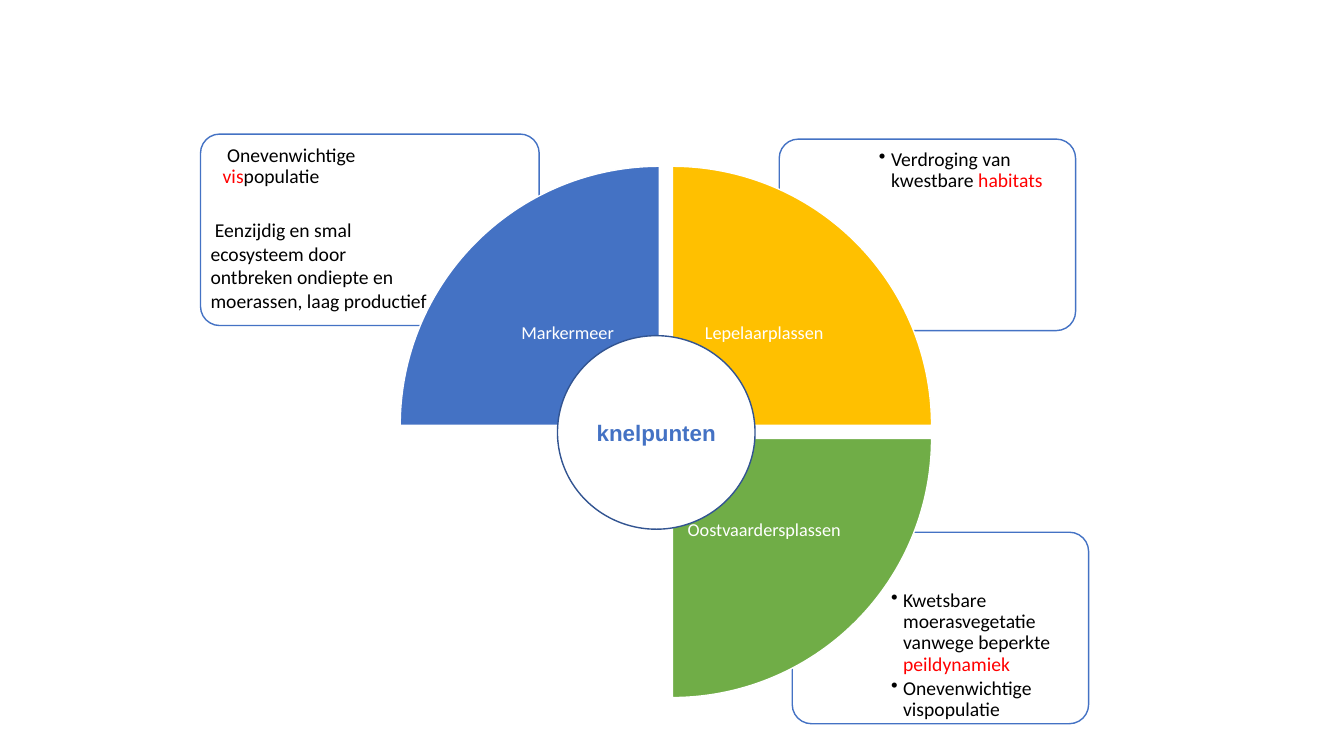
from lxml import etree
from pptx import Presentation
from pptx.dml.color import RGBColor
from pptx.enum.shapes import MSO_SHAPE
from pptx.enum.text import MSO_ANCHOR, PP_ALIGN
from pptx.oxml.ns import qn
from pptx.util import Inches, Pt

WIDE, HIGH = Inches(13.33), Inches(7.5)
BLUE = RGBColor(0x44, 0x72, 0xC4)
GOLD = RGBColor(0xFF, 0xC0, 0x00)
GREEN = RGBColor(0x70, 0xAD, 0x47)
NAVY = RGBColor(0x32, 0x54, 0x91)
RED = RGBColor(0xFF, 0x00, 0x00)
BLACK = RGBColor(0x00, 0x00, 0x00)
WHITE = RGBColor(0xFF, 0xFF, 0xFF)
ROUND, WEDGE, OVAL = MSO_SHAPE.ROUNDED_RECTANGLE, MSO_SHAPE.PIE_WEDGE, MSO_SHAPE.OVAL
TOP, MIDDLE, CENTER = MSO_ANCHOR.TOP, MSO_ANCHOR.MIDDLE, PP_ALIGN.CENTER

# Lengths are percentages of the slide's width and height.
WHEEL = (29.78, 22)
SIDE = (19.28, 34.27)
STEP = (20.25, 36)
LABEL = (13.65, 24.27)
HUB = (41.48, 44.4, 14.7, 25.6)
CARD_H, NOTE_H = 25.33, 17.87

BODY = {"size": Pt(14), "name": "Calibri"}
NAME = {"size": Pt(13), "name": "Calibri"}
TITLE = {"size": Pt(16), "name": "Arial", "bold": True}
TIGHT = {"line_spacing": 0.9, "space_after": Pt(2)}
MID = {"alignment": CENTER, "line_spacing": 0.9}
APART = {"space_before": Pt(20)}

# column, row, turn, colour, name
PARTS = [
    (0, 0, 0, BLUE, "Markermeer"),
    (1, 0, 90, GOLD, "Lepelaarplassen"),
    (1, 1, 180, GREEN, "Oostvaardersplassen"),
]

# card left, top, width; note left, top, width; paragraphs of
# (runs, format, indent in inches, bullet)
CARDS = [
    ((58.95, 70.4, 22.05), (65.85, 77.33, 14.78), [
        ([("Kwetsbare moerasvegetatie vanwege beperkte ", BLACK),
          ("peildynamiek", RED)], TIGHT, 0.12, True),
        ([("Onevenwichtige vispopulatie", BLACK)], TIGHT, 0.12, True)]),
    ((57.98, 18.4, 22.05), (64.95, 18.93, 14.78), [
        ([("Verdroging van kwestbare ", BLACK), ("habitats", RED)],
         TIGHT, 0.12, True)]),
    ((14.92, 17.73, 25.2), (15.22, 18.4, 17.03), [
        ([(" Onevenwichtige ", BLACK), ("vis", RED), ("populatie", BLACK)],
         TIGHT, 0.12, False),
        ([(" Eenzijdig en smal ecosysteem door ontbreken ondiepte en "
           "moerassen, laag productief", BLACK)], APART, 0, False)]),
]


def place(x, y, w, h):
    """Turn shares of the slide into lengths."""
    return [round(whole * share / 100)
            for whole, share in zip((WIDE, HIGH, WIDE, HIGH), (x, y, w, h))]


def put(item, form):
    for key, value in form.items():
        setattr(item, key, value)


def add_shape(slide, kind, box, fill, line):
    shape = slide.shapes.add_shape(kind, *place(*box))
    shape.shadow.inherit = False
    shape.fill.solid()
    shape.fill.fore_color.rgb = fill
    shape.line.color.rgb = line
    shape.line.width = Pt(1)
    return shape


def set_frame(frame, anchor, inset):
    sides = ("left", "top", "right", "bottom")
    put(frame, {f"margin_{side}": Inches(inset) for side in sides})
    put(frame, {"word_wrap": True, "vertical_anchor": anchor})


def add_runs(para, runs, font, form):
    put(para, form)
    for text, color in runs:
        run = para.add_run()
        run.text = text
        put(run.font, font)
        run.font.color.rgb = color


def indent(para, inch, bullet):
    props = para._p.get_or_add_pPr()
    props.set("marL", str(Inches(inch)))
    props.set("indent", str(-Inches(inch) if bullet else 0))
    if bullet:
        etree.SubElement(props, qn("a:buChar")).set("char", "•")


def add_card(slide, card, note, paras):
    shape = add_shape(slide, ROUND, (*card, CARD_H), WHITE, BLUE)
    shape.adjustments[0] = 0.1
    frame = slide.shapes.add_textbox(*place(*note, NOTE_H)).text_frame
    set_frame(frame, TOP, 0.06)
    for i, (runs, form, inch, bullet) in enumerate(paras):
        para = frame.add_paragraph() if i else frame.paragraphs[0]
        add_runs(para, runs, BODY, form)
        indent(para, inch, bullet)


def add_part(slide, col, row, turn, color, name):
    """Draw a quarter of the wheel, its label against the inner corner."""
    cell = (col, row)
    spot = [WHEEL[i] + cell[i] * STEP[i] for i in (0, 1)]
    wedge = add_shape(slide, WEDGE, (*spot, *SIDE), color, WHITE)
    wedge.rotation = turn
    inner = [spot[i] + (1 - cell[i]) * (SIDE[i] - LABEL[i]) for i in (0, 1)]
    frame = slide.shapes.add_textbox(*place(*inner, *LABEL)).text_frame
    set_frame(frame, MIDDLE, 0.1)
    add_runs(frame.paragraphs[0], [(name, WHITE)], NAME, MID)


def add_hub(slide):
    frame = add_shape(slide, OVAL, HUB, WHITE, NAVY).text_frame
    set_frame(frame, MIDDLE, 0.05)
    add_runs(frame.paragraphs[0], [("knelpunten", BLUE)], TITLE,
             {"alignment": CENTER})


def main():
    deck = Presentation()
    put(deck, {"slide_width": WIDE, "slide_height": HIGH})
    slide = deck.slides.add_slide(deck.slide_layouts[6])
    for card in CARDS:
        add_card(slide, *card)
    for part in PARTS:
        add_part(slide, *part)
    add_hub(slide)
    deck.save("out.pptx")


if __name__ == "__main__":
    main()
